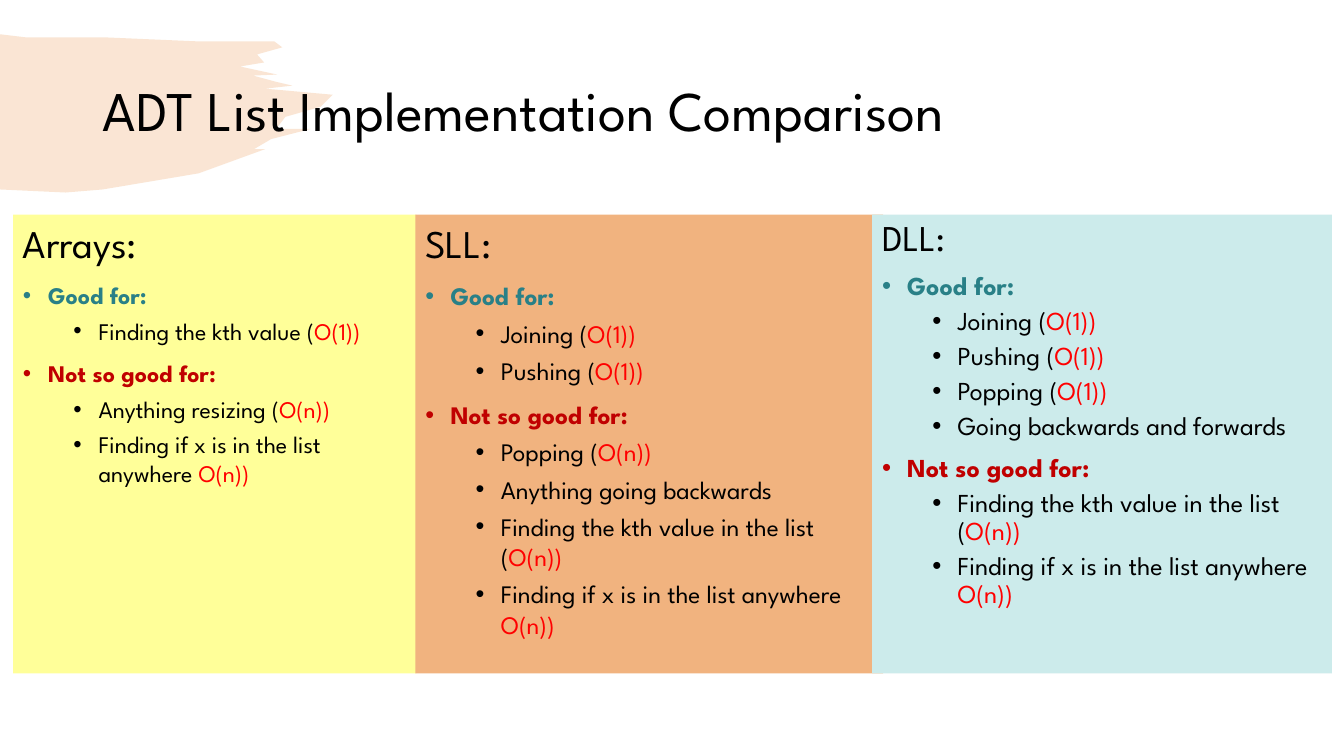
from lxml.etree import SubElement
from pptx import Presentation
from pptx.dml.color import RGBColor
from pptx.enum.shapes import MSO_SHAPE
from pptx.enum.text import MSO_ANCHOR, MSO_AUTO_SIZE, PP_ALIGN
from pptx.oxml.ns import qn
from pptx.util import Inches, Pt

FONT = "League Spartan"
BLACK = RGBColor(0x00, 0x00, 0x00)
RED = RGBColor(0xFF, 0x00, 0x00)
DARK_RED = RGBColor(0xC0, 0x00, 0x00)
TEAL = RGBColor(0x29, 0x80, 0x87)
ORANGE = RGBColor(0xE7, 0x81, 0x29)
YELLOW = RGBColor(0xFF, 0xFF, 0x99)
PEACH = RGBColor(0xF1, 0xB3, 0x7F)
PALE_BLUE = RGBColor(0xCC, 0xEB, 0xEB)

BRUSH_OUTLINE = [
    (0, 0), (0.25, 0.03), (1.02, 0.03), (1.94, 0.07), (2.48, 0.07),
    (2.72, 0.07), (2.8, 0.13), (2.55, 0.2), (2.62, 0.28), (2.38, 0.32),
    (2.75, 0.4), (2.51, 0.41), (2.73, 0.47), (2.9, 0.51), (2.63, 0.54),
    (3.3, 0.6), (3.18, 0.72), (2.83, 0.82), (2.74, 0.94), (3.08, 0.94),
    (2.69, 1.04), (2.52, 1.14), (2.63, 1.14), (1.97, 1.38), (1.02, 1.54),
    (0.65, 1.57), (0, 1.54),
]

KTH_IN_LIST = ("Finding the kth value in the list (", "O(n))")
FIND_X = ("Finding if x is in the list anywhere ", "O(n))")
JOINING = ("Joining (", "O(1))")
PUSHING = ("Pushing (", "O(1))")
PANEL_TOP, PANEL_HEIGHT = 2.13, 4.55
PANELS = [
    dict(left=0.13, width=4, fill=YELLOW, heading="Arrays:",
         heading_size=28, size=17, spacing=1.0,
         good=[("Finding the kth value (", "O(1))")],
         bad=[("Anything resizing (", "O(n))"), FIND_X]),
    dict(left=4.12, width=4.64, fill=PEACH, heading="SLL:",
         heading_size=28, size=18, spacing=1.0,
         good=[JOINING, PUSHING],
         bad=[("Popping (", "O(n))"), ("Anything going backwards", ""),
              KTH_IN_LIST, FIND_X]),
    dict(left=8.65, width=4.56, fill=PALE_BLUE, heading="DLL:",
         heading_size=25.9, size=18.5, spacing=0.9,
         good=[JOINING, PUSHING, ("Popping (", "O(1))"),
               ("Going backwards and forwards", "")],
         bad=[KTH_IN_LIST, FIND_X]),
]


def set_values(target, values):
    for name, value in values.items():
        setattr(target, name, value)


def add_span(para, text, size, color, bold=False):
    span = para.add_run()
    span.text = text
    set_values(span.font, dict(name=FONT, size=Pt(size), bold=bold))
    span.font.color.rgb = color


def add_bullet(para, indent):
    properties = para._p.get_or_add_pPr()
    properties.set("marL", str(Inches(indent)))
    properties.set("indent", str(Inches(-0.25)))
    SubElement(properties, qn("a:buFont"), typeface="Arial")
    SubElement(properties, qn("a:buChar"), char="•")


def paint(shape, color):
    shape.shadow.inherit = False
    shape.fill.solid()
    shape.fill.fore_color.rgb = color
    shape.line.fill.background()


def add_brush_stroke(page, left, top):
    """Place the translucent stroke behind the title."""
    points = [(Inches(left + x), Inches(top + y)) for x, y in BRUSH_OUTLINE]
    builder = page.shapes.build_freeform(*points[0])
    builder.add_line_segments(points[1:], close=True)
    brush = builder.convert_to_shape()
    paint(brush, ORANGE)
    color = brush._element.spPr.find(qn("a:solidFill"))[0]
    SubElement(color, qn("a:alpha"), val="20000")
    page.shapes.title._element.addprevious(brush._element)


def add_title(page, left, top, width, height):
    title = page.shapes.title
    set_values(title, dict(left=Inches(left), top=Inches(top),
                           width=Inches(width), height=Inches(height)))
    set_values(title.text_frame, dict(
        word_wrap=True, auto_size=MSO_AUTO_SIZE.NONE,
        vertical_anchor=MSO_ANCHOR.MIDDLE))
    para = title.text_frame.paragraphs[0]
    set_values(para, dict(alignment=PP_ALIGN.LEFT, line_spacing=0.9))
    add_span(para, "ADT List Implementation Comparison", 40, BLACK)


def add_panel(page, left, width, fill, heading, heading_size, size, spacing,
              good, bad):
    panel = page.shapes.add_shape(
        MSO_SHAPE.RECTANGLE, Inches(left), Inches(PANEL_TOP),
        Inches(width), Inches(PANEL_HEIGHT))
    paint(panel, fill)
    frame = panel.text_frame
    set_values(frame, dict(word_wrap=True, vertical_anchor=MSO_ANCHOR.TOP))

    def style(para, before, level=0):
        set_values(para, dict(alignment=PP_ALIGN.LEFT, line_spacing=spacing,
                              space_before=Pt(before), level=level))
        return para

    add_span(style(frame.paragraphs[0], 10), heading, heading_size, BLACK)
    for label, color, items in (("Good for:", TEAL, good),
                                ("Not so good for:", DARK_RED, bad)):
        para = style(frame.add_paragraph(), 10)
        add_bullet(para, 0.25)
        add_span(para, label, size, color, bold=True)
        for text, cost in items:
            para = style(frame.add_paragraph(), 5, level=1)
            add_bullet(para, 0.75)
            add_span(para, text, size, BLACK)
            if cost:
                add_span(para, cost, size, RED)


def main():
    deck = Presentation()
    set_values(deck, dict(slide_width=Inches(13.33), slide_height=Inches(7.5)))
    page = deck.slides.add_slide(deck.slide_layouts.get_by_name("Title Only"))
    add_brush_stroke(page, 0, 0.34)
    add_title(page, 0.92, 0.4, 11.5, 1.45)
    for panel in PANELS:
        add_panel(page, **panel)
    deck.save("out.pptx")


if __name__ == "__main__":
    main()
